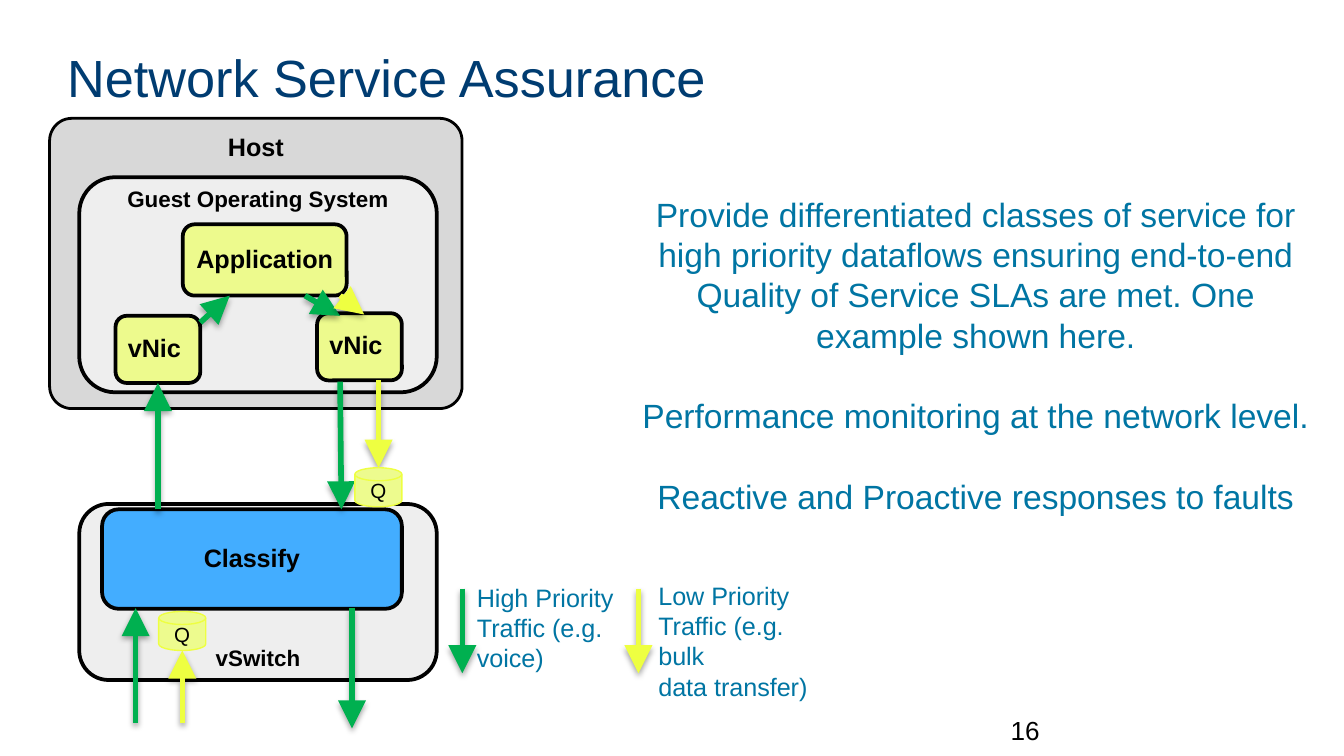
import dataclasses

import pptx
import pptx.dml.color
import pptx.enum.shapes
import pptx.enum.text
import pptx.oxml
import pptx.oxml.ns
import pptx.util

Pt = pptx.util.Pt
SHAPE = pptx.enum.shapes.MSO_SHAPE
ANCHOR = pptx.enum.text.MSO_ANCHOR
ALIGN = pptx.enum.text.PP_ALIGN


@dataclasses.dataclass(frozen=True)
class Theme:
    font: str = "Arial"
    title: str = "003C71"
    body: str = "0075A3"
    ink: str = "000000"
    host: str = "D8D8D8"
    panel: str = "EEEEEE"
    node: str = "EDFA8D"
    queue: str = "EDFB8E"
    classify: str = "43ADFF"
    high: str = "00B050"
    low: str = "EEFF41"
    title_size: float = 28
    body_size: float = 18
    number_size: float = 14
    label_size: float = 13.5
    panel_size: float = 12
    queue_size: float = 11


THEME = Theme()


def rgb(value):
    return pptx.dml.color.RGBColor.from_string(value)


def write(sp, paragraphs, size, color, bold=False, align=ALIGN.LEFT,
          anchor=ANCHOR.TOP, insets=(7.2, 3.6), spacing=1.0, gap=0):
    tf = sp.text_frame
    tf.word_wrap = True
    tf.vertical_anchor = anchor
    tf.margin_left = tf.margin_right = Pt(insets[0])
    tf.margin_top = tf.margin_bottom = Pt(insets[1])
    for i, text in enumerate(paragraphs):
        p = tf.add_paragraph() if i else tf.paragraphs[0]
        p.alignment = align
        p.line_spacing = spacing
        p.space_before = Pt(gap if i else 0)
        r = p.add_run()
        r.text = text
        r.font.name = THEME.font
        r.font.size = Pt(size)
        r.font.bold = bold
        r.font.color.rgb = rgb(color)


def add_title(s, text):
    sp = s.shapes.title
    sp.left, sp.top, sp.width, sp.height = Pt(36), Pt(24.5), Pt(648), Pt(68.4)
    write(sp, [text], THEME.title_size, THEME.title, insets=(0, 0))


def add_text(s, box, paragraphs, size, color, **style):
    sp = s.shapes.add_textbox(*map(Pt, box))
    write(sp, paragraphs, size, color, **style)


def add_filled(s, kind, box, fill, line, weight):
    sp = s.shapes.add_shape(kind, *map(Pt, box))
    sp.shadow.inherit = False
    sp.fill.solid()
    sp.fill.fore_color.rgb = rgb(fill)
    sp.line.color.rgb = rgb(line)
    sp.line.width = Pt(weight)
    return sp


def add_box(s, box, text, fill, size=THEME.label_size, anchor=ANCHOR.MIDDLE,
            corner=0.167, weight=2, insets=(2.2, 0), spacing=0.9):
    sp = add_filled(s, SHAPE.ROUNDED_RECTANGLE, box, fill, THEME.ink, weight)
    sp.adjustments[0] = corner
    write(sp, [text], size, THEME.ink, bold=True, align=ALIGN.CENTER,
          anchor=anchor, insets=insets, spacing=spacing)
    return sp


def add_queue(s, left, top):
    sp = add_filled(s, SHAPE.FLOWCHART_MAGNETIC_DISK, (left, top, 25.2, 20.9),
                    THEME.queue, THEME.low, 0.75)
    write(sp, ["Q"], THEME.queue_size, THEME.ink, align=ALIGN.CENTER,
          anchor=ANCHOR.MIDDLE)


def add_arrow(s, x1, y1, x2, y2, color):
    cx = s.shapes.add_connector(pptx.enum.shapes.MSO_CONNECTOR.STRAIGHT,
                                Pt(x1), Pt(y1), Pt(x2), Pt(y2))
    cx.line.color.rgb = rgb(color)
    cx.line.width = Pt(3)
    ns = pptx.oxml.ns.nsdecls("a")
    cx.line._get_or_add_ln().append(pptx.oxml.parse_xml(
        f'<a:tailEnd {ns} type="triangle" w="lg" len="lg"/>'))
    cx._element.spPr.append(pptx.oxml.parse_xml(
        f'<a:effectLst {ns}><a:outerShdw blurRad="{Pt(3.1)}" dist="{Pt(1.8)}" '
        f'dir="5400000" rotWithShape="0"><a:srgbClr val="{THEME.ink}">'
        '<a:alpha val="35000"/></a:srgbClr></a:outerShdw></a:effectLst>'))
    return cx


def add_diagram(s):
    high, low = THEME.high, THEME.low
    add_box(s, (42.5, 270, 191.5, 94.3), "vSwitch", THEME.panel,
            size=THEME.panel_size, anchor=ANCHOR.BOTTOM)
    add_box(s, (26.6, 63.4, 221, 155.5), "Host", THEME.host, anchor=ANCHOR.TOP,
            corner=0.077, weight=1.5, insets=(7.2, 3.6), spacing=1.0)
    add_box(s, (42.5, 95, 191.5, 115.2), "Guest Operating System", THEME.panel,
            size=THEME.panel_size, anchor=ANCHOR.TOP)
    vnic_in = add_box(s, (61.9, 169.2, 45.4, 36), "vNic ", THEME.node)
    add_box(s, (169.9, 167.8, 45.4, 36), "vNic ", THEME.node)
    add_box(s, (54.7, 272.9, 160.6, 53.3), "Classify", THEME.classify)

    add_arrow(s, 72.7, 387.4, 72.7, 325.8, high)
    add_arrow(s, 97.7, 387.4, 97.7, 348.5, low)
    to_vnic = add_arrow(s, 84.6, 272.9, 84.6, 205.2, high)
    to_vnic.end_connect(vnic_in, 2)
    add_arrow(s, 182.2, 204.5, 182.9, 272.9, high)
    add_arrow(s, 188.6, 325.8, 188.6, 390.2, high)
    add_queue(s, 85, 327.6)

    add_box(s, (97.9, 120.2, 87.8, 38.2), "Application", THEME.node)
    add_arrow(s, 202.8, 203.8, 202.8, 250.6, low)
    add_queue(s, 190.1, 250.6)
    add_arrow(s, 107.3, 172.8, 123.1, 158.4, high)
    add_arrow(s, 163.4, 158.4, 182.2, 169.2, high)
    add_arrow(s, 182.2, 158.4, 195.1, 168.5, low)


def add_legend(s):
    entries = [
        (247.7, THEME.high, (248.4, 308.2, 102.2, 56.2),
         ["High Priority Traffic (e.g. voice)"]),
        (342, THEME.low, (345.6, 307.4, 104.4, 72.7),
         ["Low Priority", "Traffic (e.g. bulk", "data transfer)"]),
    ]
    for x, color, box, lines in entries:
        add_arrow(s, x, 315.4, x, 360.7, color)
        add_text(s, box, lines, THEME.label_size, THEME.body)


def main():
    prs = pptx.Presentation()
    prs.slide_width, prs.slide_height = Pt(720), Pt(405)
    s = prs.slides.add_slide(prs.slide_layouts[5])
    add_title(s, "Network Service Assurance")
    add_diagram(s)
    add_text(s, (329.8, 100.1, 385.9, 154.8), [
        "Provide differentiated classes of service for high priority dataflows "
        "ensuring end-to-end Quality of Service SLAs are met. One example shown here.",
        "Performance monitoring at the network level.",
        "Reactive and Proactive responses to faults",
    ], THEME.body_size, THEME.body, align=ALIGN.CENTER, gap=21.7)
    add_legend(s)
    add_text(s, (541.4, 380.2, 167.8, 21.6), ["16"], THEME.number_size, THEME.ink,
             anchor=ANCHOR.MIDDLE, insets=(0, 0))
    prs.save("out.pptx")


if __name__ == "__main__":
    main()
